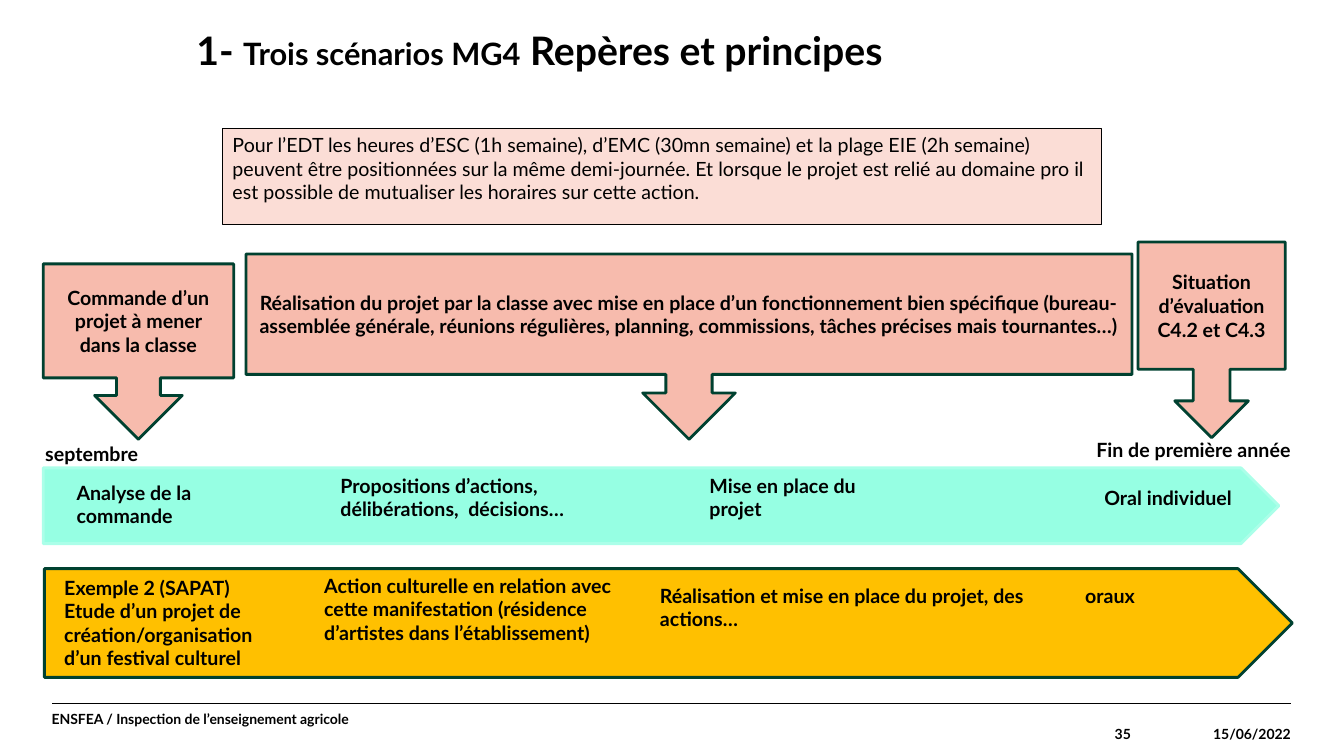
"""Build the slide on the three MG4 scenarios: callouts above two timeline arrows."""
from pptx import Presentation
from pptx.dml.color import RGBColor
from pptx.enum.shapes import MSO_CONNECTOR, MSO_SHAPE
from pptx.enum.text import MSO_ANCHOR, PP_ALIGN
from pptx.oxml.ns import qn
from pptx.util import Cm, Pt
from lxml import etree

TOP, MIDDLE = MSO_ANCHOR.TOP, MSO_ANCHOR.MIDDLE
LEFT, CENTER, RIGHT = PP_ALIGN.LEFT, PP_ALIGN.CENTER, PP_ALIGN.RIGHT
RECTANGLE, PENTAGON = MSO_SHAPE.RECTANGLE, MSO_SHAPE.PENTAGON
CALLOUT = MSO_SHAPE.DOWN_ARROW_CALLOUT
STRAIGHT = MSO_CONNECTOR.STRAIGHT
TITLE_ONLY = 5
FONT = "Lato"
BLACK, GREEN, SALMON = "000000", "004130", "F7BBAD"


def add_filled_shape(container, kind, place, fill, line, width):
    shape = container.add_shape(kind, *[Cm(length) for length in place])
    shape.shadow.inherit = False
    shape.fill.solid()
    shape.fill.fore_color.rgb = RGBColor.from_string(fill)
    shape.line.color.rgb = RGBColor.from_string(line)
    shape.line.width = Pt(width)
    return shape


def write(shape, paragraphs, alignment=LEFT, anchor=TOP, margin=None):
    frame = shape.text_frame
    frame.word_wrap = True
    frame.vertical_anchor = anchor
    if margin is not None:
        frame.margin_left = frame.margin_right = Cm(margin)
        frame.margin_top = frame.margin_bottom = Cm(margin)
    for index, runs in enumerate(paragraphs):
        paragraph = frame.add_paragraph() if index else frame.paragraphs[0]
        paragraph.alignment = alignment
        for text, size, bold in runs:
            run = paragraph.add_run()
            run.text = text
            run.font.name = FONT
            run.font.size = Pt(size)
            run.font.bold = bold
            run.font.color.rgb = RGBColor.from_string(BLACK)


presentation = Presentation()
presentation.slide_width = Cm(33.87)
presentation.slide_height = Cm(19.05)
slide = presentation.slides.add_slide(presentation.slide_layouts[TITLE_ONLY])
shapes = slide.shapes

title = shapes.title
title.left, title.top, title.width, title.height = Cm(4.95), Cm(0.79), Cm(28.09), Cm(2.67)
write(title, [[("1- ", 28, True), ("Trois scénarios MG4", 22, True),
               (" Repères et principes", 28, True)]], margin=0)
title.text_frame.paragraphs[0].line_spacing = 0.9

footer_line = shapes.add_connector(STRAIGHT, Cm(1.32), Cm(17.73), Cm(32.54), Cm(17.73))
footer_line.line.color.rgb = RGBColor.from_string(BLACK)
footer_line.line.width = Pt(0.8)
etree.SubElement(footer_line._element.spPr, qn("a:effectLst"))

footers = [
    ("ENSFEA / Inspection de l’enseignement agricole", 1.3, 17.6, 21.87, LEFT),
    ("35", 23.5, 17.98, 5, RIGHT),
    ("15/06/2022", 28.19, 17.98, 4.34, RIGHT),
]
for text, left, top, width, alignment in footers:
    box = shapes.add_textbox(Cm(left), Cm(top), Cm(width), Cm(1.02))
    write(box, [[(text, 10, True)]], alignment, MIDDLE, 0)

schedule_note = add_filled_shape(shapes, RECTANGLE, (5.61, 3.23, 22.15, 2.44), "FBDDD6", BLACK, 0.75)
write(schedule_note, [[(
    "Pour l’EDT les heures d’ESC (1h semaine), d’EMC (30mn semaine) et la plage EIE "
    "(2h semaine) peuvent être positionnées sur la même demi-journée. Et lorsque le "
    "projet est relié au domaine pro il est possible de mutualiser les horaires sur "
    "cette action.", 14, False)]])

add_filled_shape(shapes, PENTAGON, (1.09, 11.79, 31.14, 1.91), "96FFE3", "ABFFE9", 2)

callouts = [
    ((1.09, 6.65, 4.8, 4.42), ["Commande d’un projet à mener dans la classe"]),
    ((6.2, 6.4, 22.33, 4.67), [
        "Réalisation du projet par la classe avec mise en place d’un fonctionnement "
        "bien spécifique (bureau-assemblée générale, réunions régulières, planning, "
        "commissions, tâches précises mais tournantes…)"]),
    ((28.68, 6.1, 3.71, 4.93), ["Situation d’évaluation", "C4.2 et C4.3"]),
]
for place, lines in callouts:
    callout = add_filled_shape(shapes, CALLOUT, place, SALMON, GREEN, 2)
    callout.adjustments[3] = 0.65
    write(callout, [[(line, 14, True)] for line in lines], CENTER, MIDDLE)

example = shapes.add_group_shape().shapes
add_filled_shape(example, PENTAGON, (1.12, 14.33, 31.45, 2.74), "FFC000", GREEN, 2)

labels = [
    (shapes, (0.89, 11, 3.1, 0.84), ["septembre"]),
    (shapes, (27.38, 10.9, 5.87, 0.84), ["Fin de première année"]),
    (shapes, (1.68, 11.99, 4.37, 1.45), ["Analyse de la commande"]),
    (shapes, (8.33, 11.81, 6.2, 1.45), ["Propositions d’actions, délibérations,  décisions…"]),
    (shapes, (17.63, 11.81, 4.37, 1.45), ["Mise en place du projet"]),
    (shapes, (27.58, 12.12, 4.37, 0.84), ["Oral individuel"]),
    (example, (1.37, 14.38, 6.12, 3.2), [
        "Exemple 2 (SAPAT)",
        "Etude d’un projet de création/organisation d’un festival culturel"]),
    (example, (7.92, 14.33, 7.8, 2.62), [
        "Action culturelle en relation avec cette manifestation "
        "(résidence d’artistes dans l’établissement)"]),
    (example, (16.38, 14.58, 10.03, 1.45), ["Réalisation et mise en place du projet, des actions…"]),
    (example, (27.1, 14.58, 5.26, 0.86), ["oraux"]),
]
for container, place, lines in labels:
    label = container.add_textbox(*[Cm(length) for length in place])
    write(label, [[(line, 14, True)] for line in lines])

presentation.save("out.pptx")
